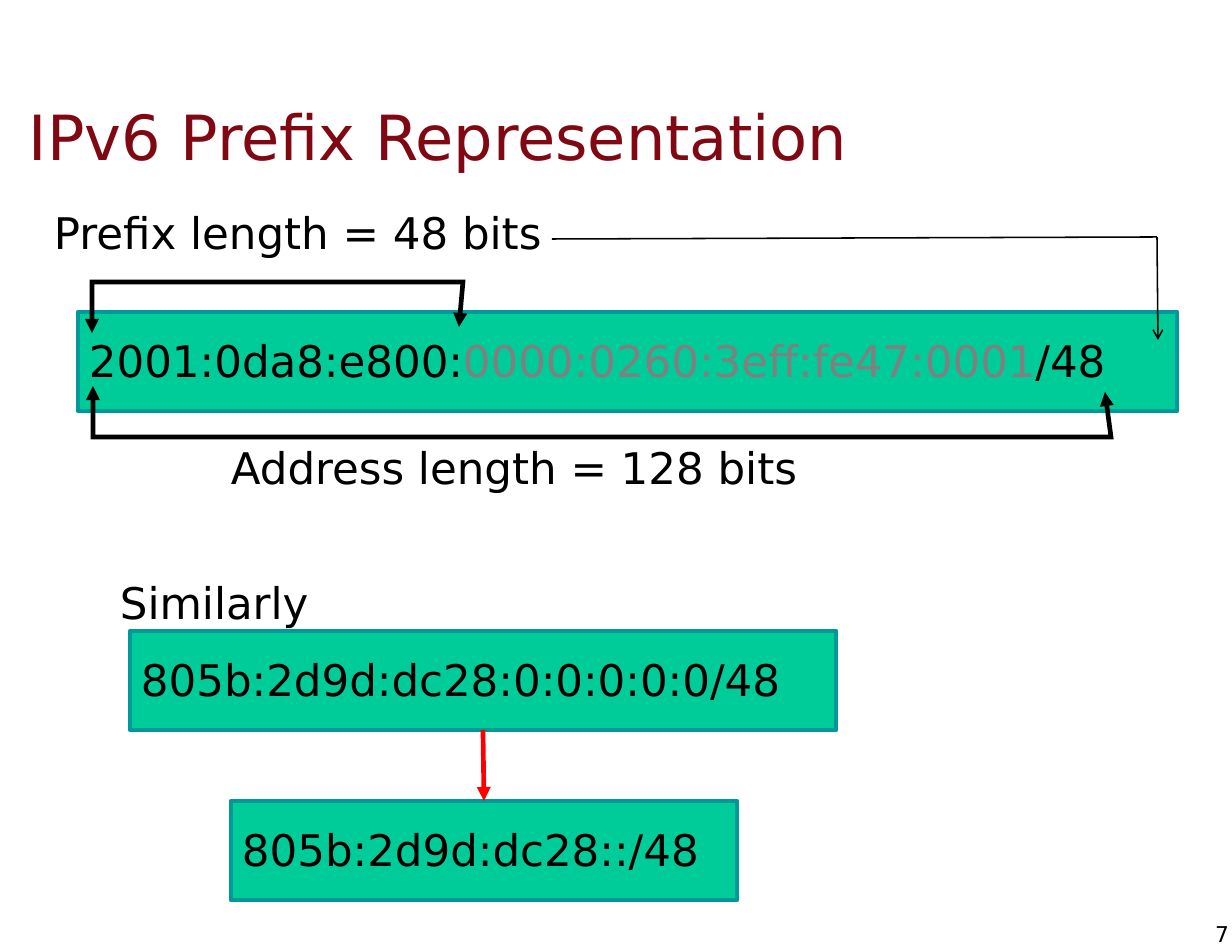
"""Build a slide that explains how IPv6 prefixes are written."""
from pptx import Presentation
from pptx.dml.color import RGBColor
from pptx.enum.shapes import MSO_CONNECTOR, MSO_SHAPE
from pptx.enum.text import MSO_ANCHOR, PP_ALIGN
from pptx.oxml.ns import qn
from pptx.util import Inches, Pt
from lxml.etree import SubElement

BLACK = RGBColor(0x00, 0x00, 0x00)
MAROON = RGBColor(0x7F, 0x08, 0x13)
GREEN = RGBColor(0x00, 0xCC, 0x99)
TEAL = RGBColor(0x00, 0x99, 0x99)
GREY = RGBColor(0x80, 0x80, 0x80)
RED = RGBColor(0xFF, 0x00, 0x00)

SCALE = Inches(1) / 112
BOX_HEIGHT = 99


def px(length):
    return round(length * SCALE)


class Painter:
    """Hold the page and its font, and draw each kind of element."""

    def __init__(self, page, font="DejaVu Sans"):
        self.page = page
        self.font = font

    def fill_text(self, shape, spans, size, margins, anchor, align=PP_ALIGN.LEFT):
        frame = shape.text_frame
        frame.word_wrap = True
        frame.vertical_anchor = anchor
        frame.margin_left = frame.margin_right = px(margins[0])
        frame.margin_top = frame.margin_bottom = px(margins[1])
        paragraph = frame.paragraphs[0]
        paragraph.alignment = align
        for text, color in spans:
            span = paragraph.add_run()
            span.text = text
            span.font.name = self.font
            span.font.size = Pt(size)
            span.font.color.rgb = color

    def label(self, left, top, width, text, height=BOX_HEIGHT, size=28, color=BLACK,
              margins=(11, 22), anchor=MSO_ANCHOR.TOP, align=PP_ALIGN.LEFT):
        box = self.page.shapes.add_textbox(px(left), px(top), px(width), px(height))
        self.fill_text(box, [(text, color)], size, margins, anchor, align)

    def address(self, left, top, width, *spans):
        box = self.page.shapes.add_shape(
            MSO_SHAPE.RECTANGLE, px(left), px(top), px(width), px(BOX_HEIGHT))
        box.shadow.inherit = False
        box.fill.solid()
        box.fill.fore_color.rgb = GREEN
        box.line.color.rgb = TEAL
        box.line.width = Pt(3)
        self.fill_text(box, spans, 28, (11, 22), MSO_ANCHOR.TOP)
        return box

    def stroke(self, shape, color, width, head=None, tail=None):
        shape.line.color.rgb = color
        shape.line.width = Pt(width)
        outline = shape._element.spPr.find(qn("a:ln"))
        SubElement(outline, qn("a:miter"), lim="800000")
        for tag, kind in (("a:headEnd", head), ("a:tailEnd", tail)):
            if kind:
                SubElement(outline, qn(tag), type=kind)

    def bracket(self, start, *points):
        builder = self.page.shapes.build_freeform(*start, scale=SCALE)
        builder.add_line_segments(points, close=False)
        shape = builder.convert_to_shape()
        shape.fill.background()
        self.stroke(shape, BLACK, 3, "triangle", "triangle")
        shape.shadow.inherit = False

    def line(self, start, end, color=BLACK, width=1, tail=None):
        connector = self.page.shapes.add_connector(
            MSO_CONNECTOR.STRAIGHT, *map(px, start + end))
        self.stroke(connector, color, width, tail=tail)
        SubElement(connector._element.spPr, qn("a:effectLst"))
        return connector


def main():
    deck = Presentation()
    deck.slide_width, deck.slide_height = Inches(11), Inches(8.5)
    painter = Painter(deck.slides.add_slide(deck.slide_layouts[6]))

    painter.label(17, 78, 1179, "IPv6 Prefix Representation", height=116, size=40,
                  color=MAROON, margins=(12, 7), anchor=MSO_ANCHOR.MIDDLE)

    painter.address(78, 312, 1099, ("2001:0da8:e800:", BLACK),
                    ("0000:0260:3eff:fe47:0001", GREY), ("/48", BLACK))
    painter.label(43, 184, 624, "Prefix length = 48 bits")
    painter.bracket((92, 333), (92, 282), (463, 282), (459, 327))
    painter.label(220, 419, 784, "Address length = 128 bits")
    painter.bracket((93, 386), (93, 437), (1111, 437), (1105, 392))
    corner = (1157, 237)
    painter.line(corner, (1158, 340), tail="arrow")
    painter.line(corner, (552, 239))

    painter.label(109, 553, 215, "Similarly", anchor=MSO_ANCHOR.MIDDLE)
    full = painter.address(130, 631, 706, ("805b:2d9d:dc28:0:0:0:0:0/48", BLACK))
    short = painter.address(231, 801, 506, ("805b:2d9d:dc28::/48", BLACK))
    arrow = painter.line((483, 730), (484, 801), RED, 3, "triangle")
    arrow.begin_connect(full, 2)
    arrow.end_connect(short, 0)

    painter.label(1191, 920, 38, "7", height=27, size=14, margins=(0, 0),
                  anchor=MSO_ANCHOR.MIDDLE, align=PP_ALIGN.RIGHT)
    deck.save("out.pptx")


if __name__ == "__main__":
    main()
